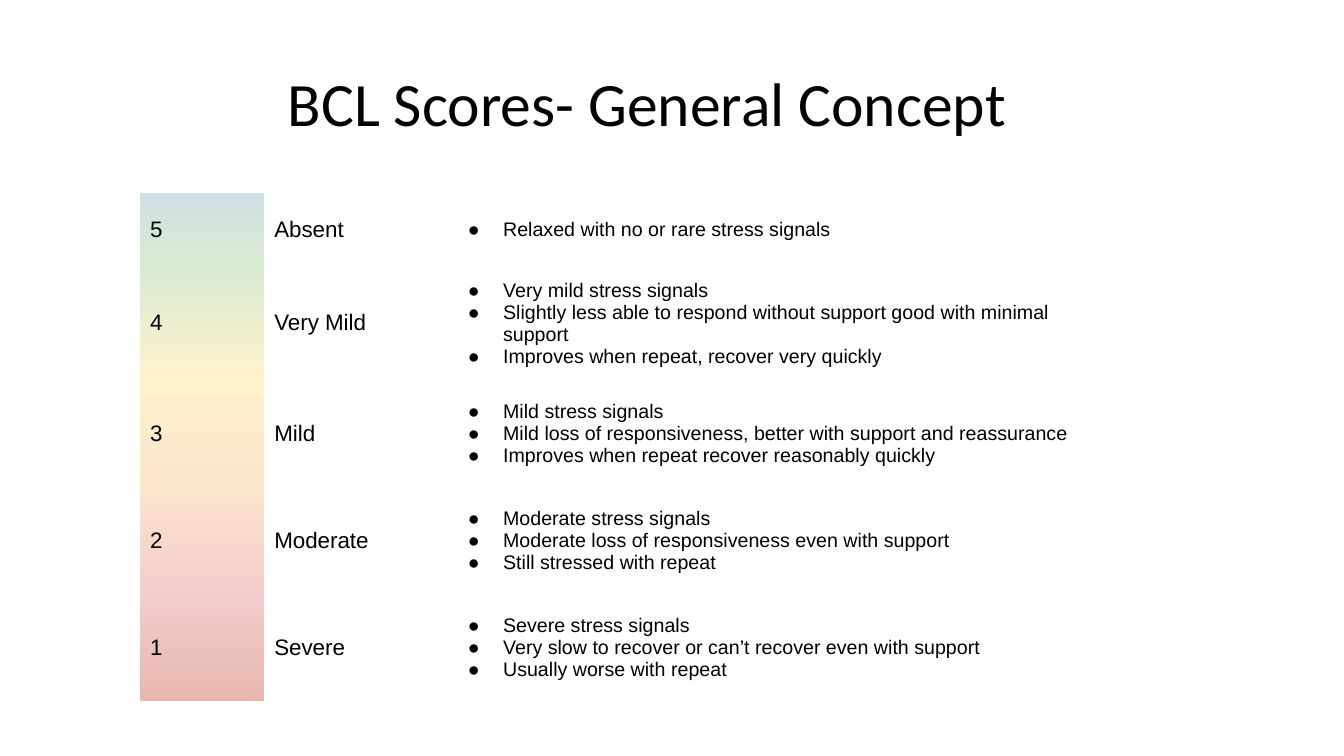
from pptx import Presentation
from pptx.dml.color import RGBColor
from pptx.enum.text import MSO_ANCHOR, PP_ALIGN
from pptx.oxml.ns import qn
from pptx.util import Inches, Pt
from lxml.etree import SubElement

BLACK = RGBColor(0x00, 0x00, 0x00)
WHITE = RGBColor(0xFF, 0xFF, 0xFF)
# Each score fades from its own colour to the next one.
SCALE = [
    RGBColor(0xD0, 0xE0, 0xE3),
    RGBColor(0xD9, 0xEA, 0xD3),
    RGBColor(0xFF, 0xF2, 0xCC),
    RGBColor(0xFC, 0xE5, 0xCD),
    RGBColor(0xF4, 0xCC, 0xCC),
    RGBColor(0xE6, 0xB8, 0xAF),
]
NO_STYLE_NO_GRID = "{2D5ABB26-0587-4C30-8999-92F81FD0307C}"
COLUMN_WIDTHS = [1.23, 1.77, 6.61]
ROW_HEIGHTS = [0.73] + [1.06] * 4
SCORES = [
    ("5", "Absent", ["Relaxed with no or rare stress signals"]),
    ("4", "Very Mild", [
        "Very mild stress signals",
        "Slightly less able to respond without support good with minimal support",
        "Improves when repeat, recover very quickly",
    ]),
    ("3", "Mild", [
        "Mild stress signals",
        "Mild loss of responsiveness, better with support and reassurance",
        "Improves when repeat recover reasonably quickly",
    ]),
    ("2", "Moderate", [
        "Moderate stress signals",
        "Moderate loss of responsiveness even with support",
        "Still stressed with repeat",
    ]),
    ("1", "Severe", [
        "Severe stress signals",
        "Very slow to recover or can’t recover even with support",
        "Usually worse with repeat",
    ]),
]


def style_font(paragraph, name, size):
    paragraph.font.name = name
    paragraph.font.size = Pt(size)
    paragraph.font.color.rgb = BLACK


def add_bullet(paragraph):
    properties = paragraph._p.get_or_add_pPr()
    properties.set("marL", str(Inches(0.5)))
    properties.set("indent", str(Inches(-0.35)))
    colour = SubElement(properties, qn("a:buClr"))
    SubElement(colour, qn("a:srgbClr"), val=str(BLACK))
    SubElement(properties, qn("a:buFont"), typeface="Arial")
    SubElement(properties, qn("a:buChar"), char="●")


presentation = Presentation()
presentation.slide_width = Inches(13.33)
presentation.slide_height = Inches(7.5)
slide = presentation.slides.add_slide(presentation.slide_layouts[6])

title = slide.shapes.add_textbox(Inches(2.7), Inches(0.33), Inches(7.44), Inches(1.45))
title.text_frame.word_wrap = True
title.text_frame.vertical_anchor = MSO_ANCHOR.MIDDLE
heading = title.text_frame.paragraphs[0]
heading.text = "BCL Scores- General Concept"
heading.alignment = PP_ALIGN.CENTER
heading.line_spacing = 0.9
style_font(heading, "Calibri", 44)

table_frame = slide.shapes.add_table(
    len(SCORES), len(COLUMN_WIDTHS), Inches(1.39), Inches(1.91),
    Inches(sum(COLUMN_WIDTHS)), Inches(sum(ROW_HEIGHTS)))
table = table_frame.table
table.first_row = False
table.horz_banding = False
for style_id in table_frame.element.iter(qn("a:tableStyleId")):
    style_id.text = NO_STYLE_NO_GRID
for column, width in zip(table.columns, COLUMN_WIDTHS):
    column.width = Inches(width)
for row, height in zip(table.rows, ROW_HEIGHTS):
    row.height = Inches(height)

for row, (score, level, signs) in zip(table.rows, SCORES):
    for cell, lines, size in zip(row.cells, ([score], [level], signs), (16, 16, 14)):
        cell.vertical_anchor = MSO_ANCHOR.MIDDLE
        cell.margin_left = cell.margin_right = Inches(0.1)
        cell.margin_top = cell.margin_bottom = Inches(0.1)
        cell.fill.solid()
        cell.fill.fore_color.rgb = WHITE
        cell.text = "\n".join(lines)
        for paragraph in cell.text_frame.paragraphs:
            style_font(paragraph, "Arial", size)
            if lines is signs:
                add_bullet(paragraph)

for row, top_colour, bottom_colour in zip(table.rows, SCALE, SCALE[1:]):
    fill = row.cells[0].fill
    fill.gradient()
    fill.gradient_angle = 270
    for stop, colour in zip(fill.gradient_stops, (top_colour, bottom_colour)):
        stop.color.rgb = colour

presentation.save("out.pptx")
